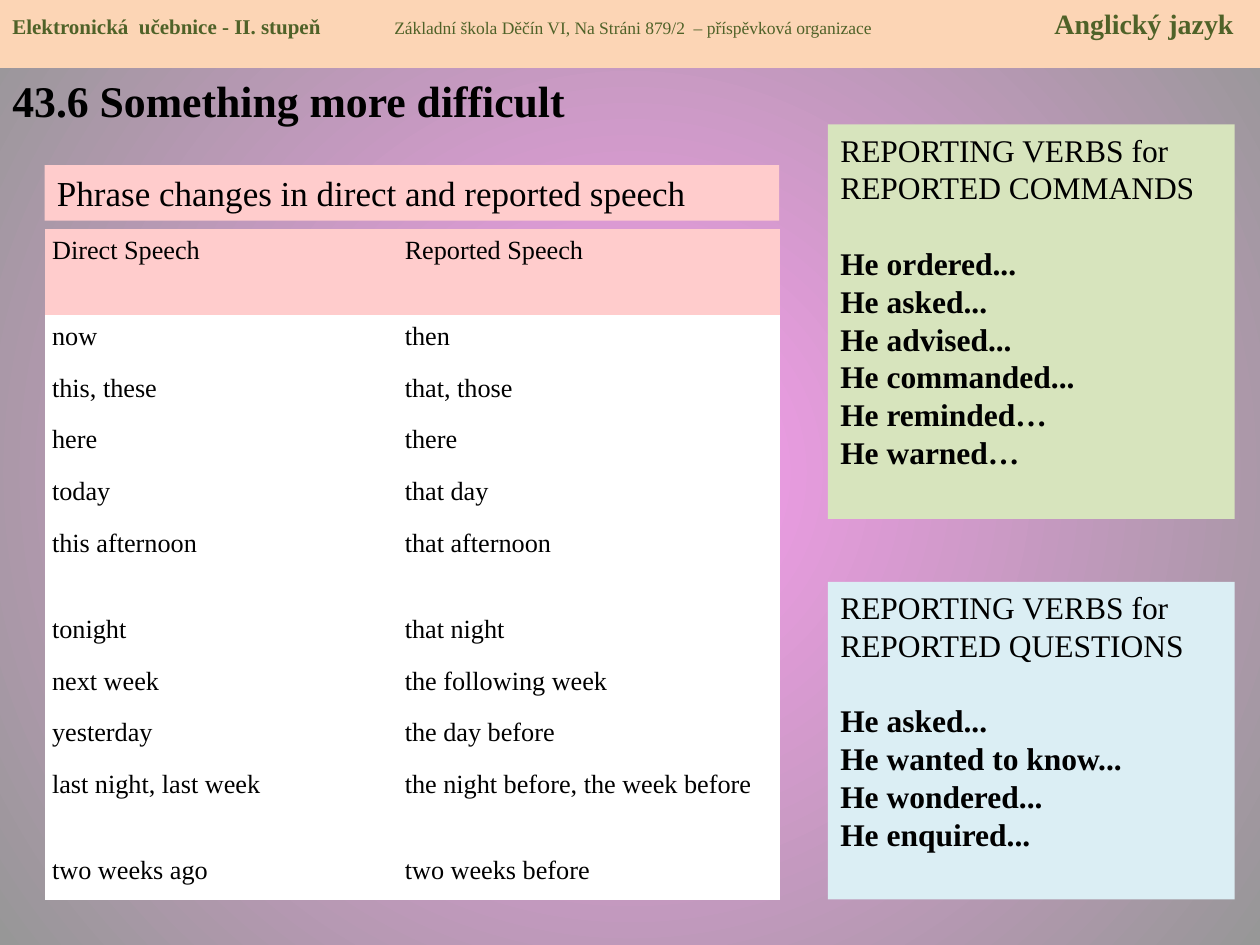
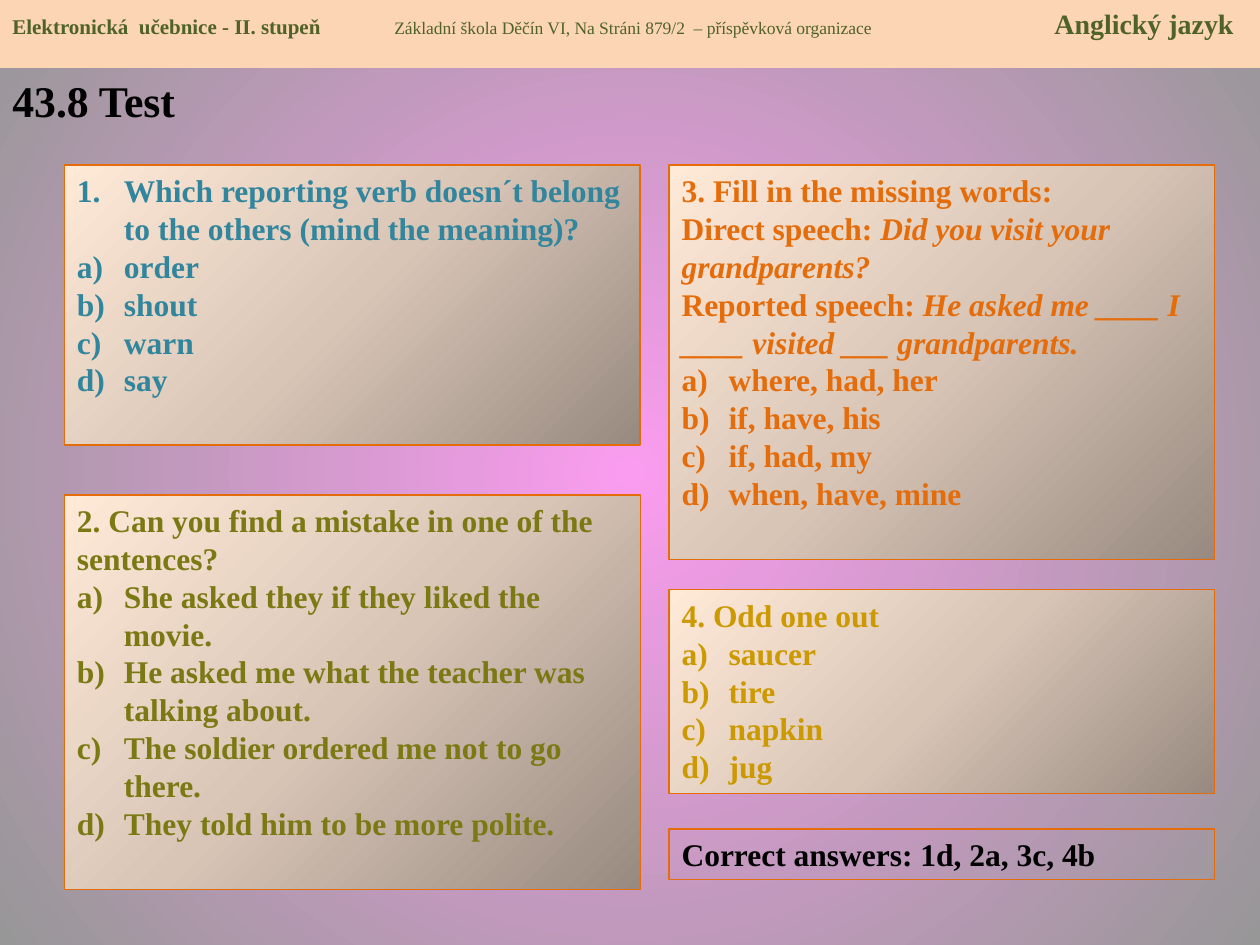
from lxml import etree
from pptx import Presentation
from pptx.dml.color import RGBColor
from pptx.enum.shapes import MSO_SHAPE
from pptx.enum.text import MSO_ANCHOR, PP_ALIGN
from pptx.oxml.ns import qn
from pptx.util import Cm, Pt

RECTANGLE = MSO_SHAPE.RECTANGLE
TOP = MSO_ANCHOR.TOP
LEFT = PP_ALIGN.LEFT

FONT = "Times New Roman"
LINE_FACTOR = 1.2
BODY_SIZE = 18
PLAIN_TABLE = "{2D5ABB26-0587-4C30-8999-92F81FD0307C}"
COLORS = {
    "black": "000000", "white": "FFFFFF", "band": "FCD5B5",
    "header": "4F6228", "pink": "FFCCCC", "blue": "DBEEF4",
    "green": "D7E4BD", "orange": "E46C0A", "teal": "31859C",
    "olive": "7B7913", "gold": "CC9900",
}
PAGE_GRADIENT = [(0, "FA9CEF"), (100, "979797")]
CARD_GRADIENT = [(0, "988A80"), (50, "D8C5B6"), (100, "FFEAD8")]


def color(name):
    return RGBColor.from_string(COLORS[name])


def set_circle_gradient(fill, element, stops, focus):
    """Turn a fill into a circular gradient; focus is left, top, right, bottom in percent."""
    fill.gradient()
    gradient = element.find(".//" + qn("a:gradFill"))
    gradient.clear()
    stop_list = etree.SubElement(gradient, qn("a:gsLst"))
    for position, value in stops:
        stop = etree.SubElement(stop_list, qn("a:gs"), pos=str(position * 1000))
        etree.SubElement(stop, qn("a:srgbClr"), val=value)
    circle = etree.SubElement(gradient, qn("a:path"), {"path": "circle"})
    sides = {side: str(value * 1000) for side, value in zip("ltrb", focus)}
    etree.SubElement(circle, qn("a:fillToRect"), sides)


class LessonDeck:
    def __init__(self):
        self.deck = Presentation()
        self.deck.slide_width, self.deck.slide_height = Cm(25.4), Cm(19.05)
        self.page = None

    def add_page(self, title):
        self.page = self.deck.slides.add_slide(self.deck.slide_layouts[6])
        set_circle_gradient(self.page.background.fill, self.page.element,
                            PAGE_GRADIENT, (50, 50, 50, 50))
        box = self.page.shapes.add_textbox(0, Cm(1.37), Cm(25.4), Cm(17.68))
        box.text_frame.word_wrap = True
        self.set_text(box.text_frame.paragraphs[0], title, 25, bold=True)
        self.header()

    def header(self):
        band = self.rectangle(0, 0, 25.4, 1.37, "band")
        paragraph = band.text_frame.paragraphs[0]
        tabs = etree.SubElement(paragraph._p.get_or_add_pPr(), qn("a:tabLst"))
        for position, side in ((7.7, "l"), (24.62, "r")):
            etree.SubElement(tabs, qn("a:tab"), pos=str(Cm(position)), algn=side)
        self.set_text(paragraph, "", 16, "header")
        for text, size, bold in (
            ("Elektronická  učebnice - II. stupeň\t", 12, True),
            ("Základní škola Děčín VI, Na Stráni 879/2  – příspěvková organizace\t", 10, False),
            ("Anglický jazyk", 16, True),
        ):
            span = paragraph.add_run()
            span.text = text
            span.font.size, span.font.bold = Pt(size), bold

    def rectangle(self, left, top, width, height, fill=None, line=None):
        box = self.page.shapes.add_shape(
            RECTANGLE, Cm(left), Cm(top), Cm(width), Cm(height))
        box.shadow.inherit = False
        if fill:
            box.fill.solid()
            box.fill.fore_color.rgb = color(fill)
        else:
            box.fill.background()
        if line:
            box.line.color.rgb = color("orange")
            box.line.width = Pt(line)
        else:
            box.line.fill.background()
        box.text_frame.vertical_anchor = TOP
        return box

    def set_text(self, paragraph, text, size=BODY_SIZE, ink="black", bold=False,
                 numbering=None, exact=True):
        """Fill a paragraph; a tuple holds an upright part and an italic part."""
        if numbering:
            properties = paragraph._p.get_or_add_pPr()
            properties.set("marL", str(Cm(0.95)))
            properties.set("indent", str(-Cm(0.95)))
            etree.SubElement(properties, qn("a:buFont"), typeface="+mj-lt")
            etree.SubElement(properties, qn("a:buAutoNum"), type=numbering)
        paragraph.alignment = LEFT
        if exact:
            paragraph.line_spacing = Pt(size * LINE_FACTOR)
        font = paragraph.font
        font.name, font.size, font.bold = FONT, Pt(size), bold
        font.color.rgb = color(ink)
        parts = text if isinstance(text, tuple) else (text,)
        for index, part in enumerate(parts):
            if part:
                span = paragraph.add_run()
                span.text = part
                if index:
                    span.font.italic = True

    def paragraphs(self, box, count):
        frame = box.text_frame
        return [frame.paragraphs[0]] + [frame.add_paragraph() for _ in range(count - 1)]

    def verb_panel(self, top, height, fill, heading, verbs):
        box = self.rectangle(16.69, top, 8.2, height, fill)
        first, *rest = self.paragraphs(box, len(verbs) + 1)
        self.set_text(first, heading)
        for paragraph, verb in zip(rest, verbs):
            self.set_text(paragraph, verb, bold=True)
        rest[0].space_before = Pt(BODY_SIZE * LINE_FACTOR)

    def question(self, place, ink, prompts, answers, line=0.75, prompt_numbering=None):
        box = self.rectangle(*place, line=line)
        set_circle_gradient(box.fill, box.element, CARD_GRADIENT, (100, 100, 0, 0))
        items = [(text, prompt_numbering) for text in prompts]
        items += [(text, "alphaLcParenR") for text in answers]
        for paragraph, (text, numbering) in zip(self.paragraphs(box, len(items)), items):
            self.set_text(paragraph, text, ink=ink, bold=True, numbering=numbering)

    def phrase_table(self, rows, tall_rows):
        heights = [1.74 if index in tall_rows else 1.04 for index in range(len(rows))]
        widths = (7.11, 7.72)
        frame = self.page.shapes.add_table(
            len(rows), len(widths), Cm(0.9), Cm(4.61), Cm(sum(widths)), Cm(sum(heights)))
        frame.element.find(".//" + qn("a:tableStyleId")).text = PLAIN_TABLE
        table = frame.table
        table.first_row = table.horz_banding = False
        for column, width in zip(table.columns, widths):
            column.width = Cm(width)
        for row_index, texts in enumerate(rows):
            table.rows[row_index].height = Cm(heights[row_index])
            for column_index, text in enumerate(texts):
                cell = table.cell(row_index, column_index)
                cell.fill.solid()
                cell.fill.fore_color.rgb = color("white" if row_index else "pink")
                cell.margin_left = cell.margin_right = Cm(0.15)
                cell.margin_top = cell.margin_bottom = Cm(0.15)
                self.set_text(cell.text_frame.paragraphs[0], text, 15, exact=False)


def build_phrases(lesson):
    lesson.add_page("43.6 Something more difficult")
    # Reporting verbs
    lesson.verb_panel(11.73, 6.4, "blue", "REPORTING VERBS for REPORTED QUESTIONS", [
        "He asked...", "He wanted to know...", "He wondered...", "He enquired..."])
    lesson.verb_panel(2.51, 7.95, "green", "REPORTING VERBS for REPORTED COMMANDS", [
        "He ordered...", "He asked...", "He advised...", "He commanded...",
        "He reminded…", "He warned…"])
    # Phrase changes
    lesson.phrase_table([
        ("Direct Speech", "Reported Speech"),
        ("now", "then"),
        ("this, these", "that, those"),
        ("here", "there"),
        ("today", "that day"),
        ("this afternoon", "that afternoon"),
        ("tonight", "that night"),
        ("next week", "the following week"),
        ("yesterday", "the day before"),
        ("last night, last week", "the night before, the week before"),
        ("two weeks ago", "two weeks before"),
    ], tall_rows=(0, 5, 9))
    banner = lesson.rectangle(0.9, 3.33, 14.81, 1.12, "pink")
    lesson.set_text(banner.text_frame.paragraphs[0],
                    "Phrase changes in direct and reported speech", 20)


def build_test(lesson):
    lesson.add_page("43.8 Test")
    left, left_width = 1.3, 11.61
    right, right_width = 13.49, 11
    # Questions
    lesson.question((left, 3.33, left_width, 5.64), "teal",
                    ["Which reporting verb doesn´t belong to the others (mind the meaning)?"],
                    ["order", "shout", "warn", "say"],
                    line=1, prompt_numbering="arabicPeriod")
    lesson.question((left, 9.98, left_width, 7.95), "olive",
                    ["2. Can you find a mistake in one of the sentences?"],
                    ["She asked they if they liked the movie.",
                     "He asked me what the teacher was talking about.",
                     "The soldier ordered me not to go there.",
                     "They told him to be more polite."])
    lesson.question((right, 3.33, right_width, 7.95), "orange",
                    ["3. Fill in the missing words:",
                     ("Direct speech: ", "Did you visit your grandparents?"),
                     ("Reported speech: ", "He asked me ____ I ____ visited ___ grandparents.")],
                    ["where, had, her", "if, have, his", "if, had, my", "when, have, mine"])
    lesson.question((right, 11.89, right_width, 4.11), "gold",
                    ["4. Odd one out"], ["saucer", "tire", "napkin", "jug"])
    # Answers
    answers = lesson.rectangle(right, 16.71, right_width, 1.02, line=0.75)
    lesson.set_text(answers.text_frame.paragraphs[0],
                    "Correct answers: 1d, 2a, 3c, 4b", bold=True)


def main():
    lesson = LessonDeck()
    build_phrases(lesson)
    build_test(lesson)
    lesson.deck.save("out.pptx")


if __name__ == "__main__":
    main()
